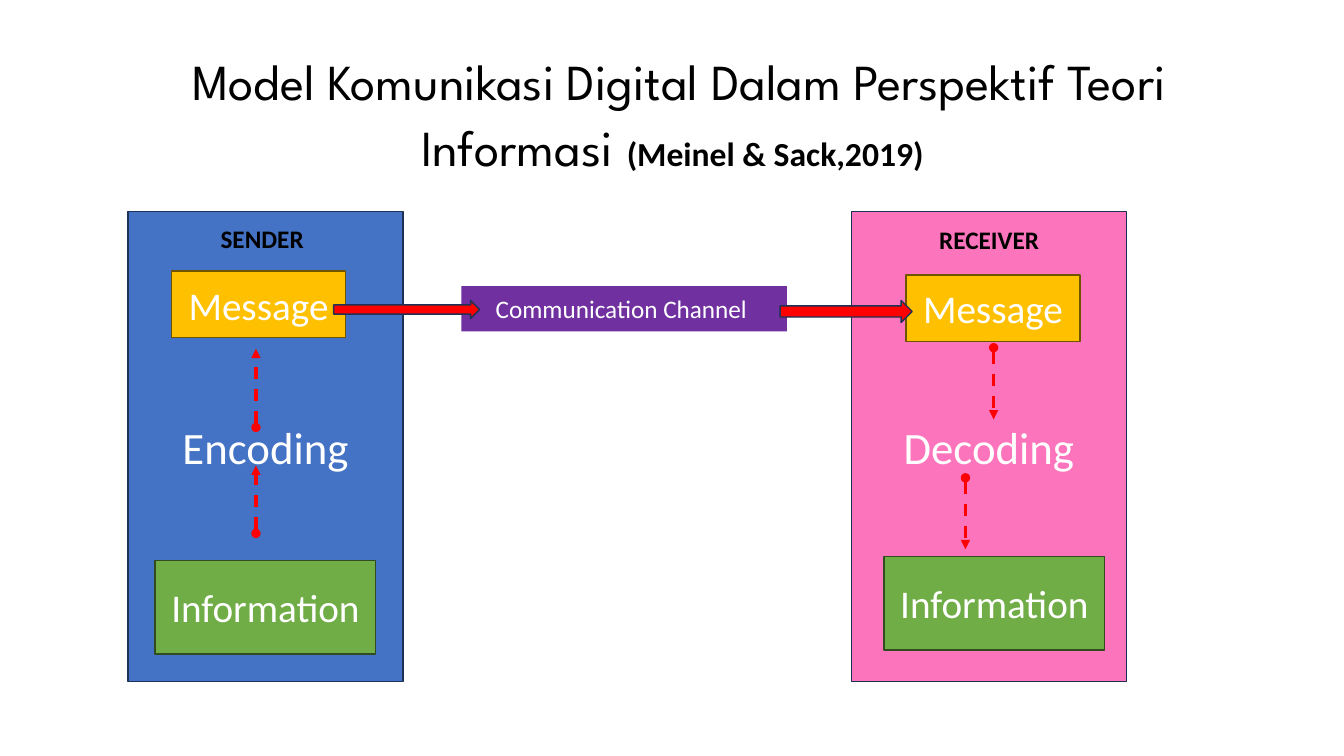
from lxml import etree
from pptx import Presentation
from pptx.dml.color import RGBColor
from pptx.enum.dml import MSO_LINE
from pptx.enum.shapes import MSO_CONNECTOR, MSO_SHAPE
from pptx.enum.text import MSO_ANCHOR, MSO_AUTO_SIZE, PP_ALIGN
from pptx.oxml.ns import qn
from pptx.util import Cm, Pt

RECTANGLE, RIGHT_ARROW = MSO_SHAPE.RECTANGLE, MSO_SHAPE.RIGHT_ARROW
STRAIGHT, DASH = MSO_CONNECTOR.STRAIGHT, MSO_LINE.DASH
CENTER, MIDDLE = PP_ALIGN.CENTER, MSO_ANCHOR.MIDDLE
GROW = MSO_AUTO_SIZE.SHAPE_TO_FIT_TEXT

BLACK = RGBColor(0x00, 0x00, 0x00)
WHITE = RGBColor(0xFF, 0xFF, 0xFF)
BLUE = RGBColor(0x44, 0x72, 0xC4)
NAVY = RGBColor(0x1E, 0x32, 0x56)
PINK = RGBColor(0xFC, 0x74, 0xBB)
AMBER = RGBColor(0xFF, 0xC0, 0x00)
BROWN = RGBColor(0x70, 0x54, 0x00)
GREEN = RGBColor(0x70, 0xAD, 0x47)
DARK_GREEN = RGBColor(0x31, 0x4C, 0x1F)
PURPLE = RGBColor(0x70, 0x30, 0xA0)
RED = RGBColor(0xFF, 0x00, 0x00)


class Diagram:
    body_font = "Calibri"
    title_font = "League Spartan"

    def __init__(self, page):
        self.page = page

    def style(self, span, size, color, bold=False, font=body_font):
        span.font.name = font
        span.font.size = Pt(size)
        span.font.bold = bold
        span.font.color.rgb = color

    def title(self, place, spans):
        box = self.page.shapes.add_textbox(*map(Cm, place))
        frame = box.text_frame
        frame.word_wrap = True
        frame.vertical_anchor = MIDDLE
        para = frame.paragraphs[0]
        para.alignment = CENTER
        para.line_spacing = 0.9
        for text, size, bold, font in spans:
            span = para.add_run()
            span.text = text
            self.style(span, size, BLACK, bold, font)

    def heading(self, place, text):
        box = self.page.shapes.add_textbox(*map(Cm, place))
        frame = box.text_frame
        frame.word_wrap = True
        frame.auto_size = GROW
        frame.text = text
        self.style(frame.paragraphs[0].runs[0], 18, BLACK, bold=True)

    def shape(self, preset, place, fill, outline=None):
        shape = self.page.shapes.add_shape(preset, *map(Cm, place))
        shape.shadow.inherit = False
        shape.fill.solid()
        shape.fill.fore_color.rgb = fill
        if outline is None:
            shape.line.fill.background()
        else:
            shape.line.color.rgb = outline
            shape.line.width = Pt(1)
        return shape

    def block(self, place, text, size, fill, outline=None):
        frame = self.shape(RECTANGLE, place, fill, outline).text_frame
        frame.word_wrap = True
        frame.vertical_anchor = MIDDLE
        frame.text = text
        para = frame.paragraphs[0]
        para.alignment = CENTER
        self.style(para.runs[0], size, WHITE)

    def block_arrow(self, place):
        self.shape(RIGHT_ARROW, place, RED, NAVY)

    def dashed_arrow(self, x, start, end):
        """Draw a vertical dashed arrow that starts with a dot."""
        arrow = self.page.shapes.add_connector(STRAIGHT, Cm(x), Cm(start), Cm(x), Cm(end))
        arrow.line.color.rgb = RED
        arrow.line.width = Pt(2.25)
        arrow.line.dash_style = DASH
        properties = arrow.line._get_or_add_ln()
        for tag, kind in (("a:headEnd", "oval"), ("a:tailEnd", "triangle")):
            etree.SubElement(properties, qn(tag)).set("type", kind)
        etree.SubElement(arrow._element.spPr, qn("a:effectLst"))

    def party(self, left, color, process, heading, heading_at, message_at, information_at, arrows):
        """Draw a sender or receiver panel with everything inside it."""
        self.block((left, 5.33, 6.93, 11.84), process, 32, color, NAVY)
        self.heading((*heading_at, 3.2, 1.02), heading)
        self.block((*message_at, 4.39, 1.68), "Message", 28, AMBER, BROWN)
        self.block((*information_at, 5.56, 2.36), "Information", 28, GREEN, DARK_GREEN)
        for arrow in arrows:
            self.dashed_arrow(*arrow)


def main():
    deck = Presentation()
    deck.slide_width, deck.slide_height = Cm(33.87), Cm(19.05)
    diagram = Diagram(deck.slides.add_slide(deck.slide_layouts[6]))

    body, display = Diagram.body_font, Diagram.title_font
    diagram.title((2.34, 1.02, 29.21, 3.68), [
        (" ", 44, False, body),
        ("Model Komunikasi Digital Dalam Perspektif Teori Informasi", 36, False, display),
        (" ", 44, False, body),
        ("(Meinel & Sack,2019)", 24, True, body),
    ])
    diagram.party(3.23, BLUE, "Encoding", "SENDER", (5.31, 5.51), (4.32, 6.83),
                  (3.91, 14.12), [(6.45, 10.77, 8.79), (6.45, 13.44, 11.73)])
    diagram.party(21.46, PINK, "Decoding", "RECEIVER", (23.42, 5.54), (22.83, 6.93),
                  (22.28, 14.02), [(25.04, 8.76, 10.57), (24.33, 12.04, 13.84)])
    diagram.block((11.63, 7.21, 8.2, 1.14), "Communication Channel ", 18, PURPLE)
    diagram.block_arrow((19.66, 7.57, 3.33, 0.56))
    diagram.block_arrow((8.41, 7.57, 3.68, 0.46))

    deck.save("out.pptx")


if __name__ == "__main__":
    main()
